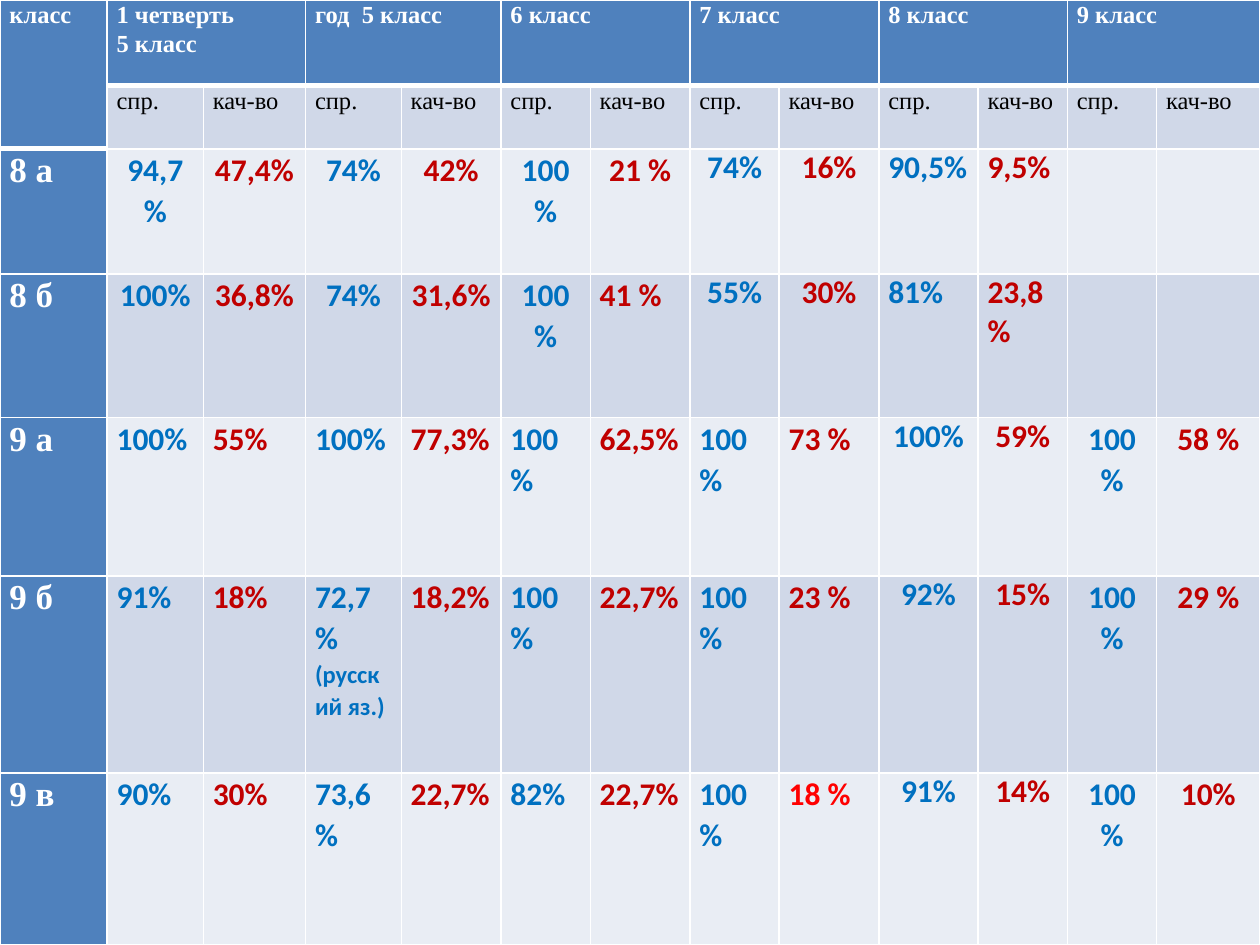
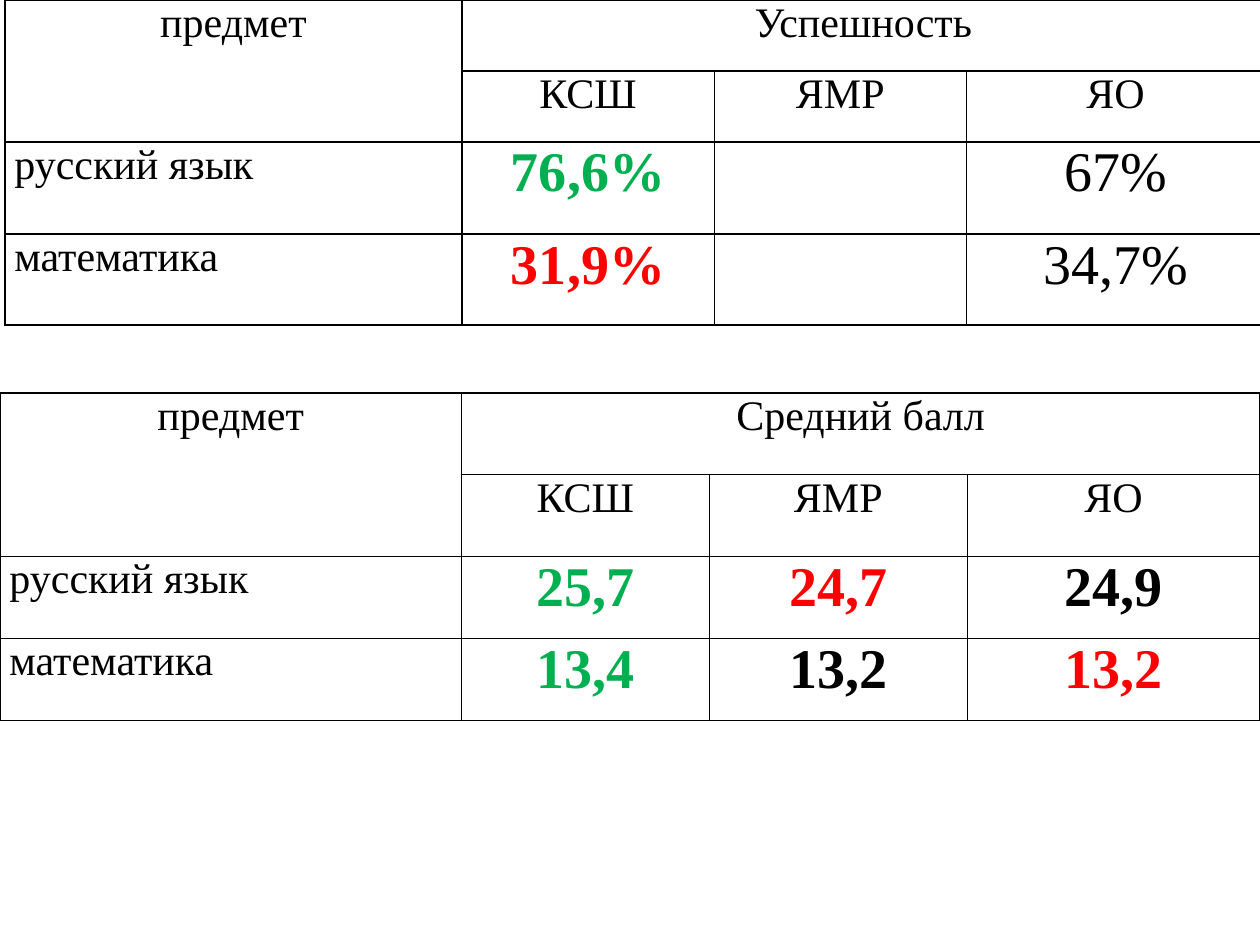
from lxml.etree import SubElement
from pptx import Presentation
from pptx.dml.color import RGBColor
from pptx.enum.text import PP_ALIGN
from pptx.oxml.ns import qn
from pptx.util import Cm, Pt

WHITE = RGBColor(0xFF, 0xFF, 0xFF)
BLACK = RGBColor(0x00, 0x00, 0x00)
HEADER_BLUE = RGBColor(0x4F, 0x81, 0xBD)
BAND_DARK = RGBColor(0xD0, 0xD8, 0xE8)
BAND_LIGHT = RGBColor(0xE9, 0xED, 0xF4)
PASS_BLUE = RGBColor(0x00, 0x70, 0xC0)
QUALITY_RED = RGBColor(0xC0, 0x00, 0x00)
RED = RGBColor(0xFF, 0x00, 0x00)
GREEN = RGBColor(0x00, 0xB0, 0x50)

SERIF = "Times New Roman"
SANS = "Calibri"
CENTER, LEFT = PP_ALIGN.CENTER, PP_ALIGN.LEFT
SLIDE_WIDTH, SLIDE_HEIGHT = 25.4, 19.05
CELL_MARGIN = 0.19
LOOSE = 1.07

PERIODS = ["1 четверть\n5 класс", "год  5 класс", "6 класс", "7 класс", "8 класс", "9 класс"]
MEASURES = ["спр.", "кач-во"]
CLASS_RESULTS = {
    "8 а": ["94,7%", "47,4%", "74%", "42%", "100%", "21 %", "74%", "16%", "90,5%", "9,5%"],
    "8 б": ["100%", "36,8%", "74%", "31,6%", "100%", "41 %", "55%", "30%", "81%", "23,8%"],
    "9 а": ["100%", "55%", "100%", "77,3%", "100%", "62,5%", "100%", "73 %", "100%", "59%",
            "100%", "58 %"],
    "9 б": ["91%", "18%", "72,7%\n(русский яз.)", "18,2%", "100%", "22,7%", "100%", "23 %",
            "92%", "15%", "100%", "29 %"],
    "9 в": ["90%", "30%", "73,6%", "22,7%", "82%", "22,7%", "100%", "18 %", "91%", "14%",
            "100%", "10%"],
}
CLASS_COLUMNS = [2.16, 1.94, 2.06, 1.93, 2.01, 1.8, 2.01, 1.8, 2.01, 2.0, 1.8, 1.8, 2.08]
CLASS_ROWS = [1.73, 1.27, 2.52, 2.9, 3.19, 3.97, 3.47]

SCHOOL_LEVELS = ["КСШ", "ЯМР", "ЯО"]
# Each result: text, colour, bold
SUCCESS_RATES = {
    "русский язык": [("76,6%", GREEN, True), None, ("67%", BLACK, False)],
    "математика": [("31,9%", RED, True), None, ("34,7%", BLACK, False)],
}
AVERAGE_SCORES = {
    "русский язык": [("25,7", GREEN, True), ("24,7", RED, True), ("24,9", BLACK, True)],
    "математика": [("13,4", GREEN, True), ("13,2", BLACK, True), ("13,2", RED, True)],
}


def add_grid(slide, left, top, columns, rows):
    """Add an unstyled table with the given column widths and row heights in cm."""
    table = slide.shapes.add_table(len(rows), len(columns), Cm(left), Cm(top),
                                   Cm(sum(columns)), Cm(sum(rows))).table
    table.first_row = table.horz_banding = False
    for column, width in zip(table.columns, columns):
        column.width = Cm(width)
    for row, height in zip(table.rows, rows):
        row.height = Cm(height)
    return table


def set_borders(cell, color, bottom=1, top=1):
    properties = cell._tc.get_or_add_tcPr()
    for side, width in (("L", 1), ("R", 1), ("T", top), ("B", bottom)):
        line = SubElement(properties, qn(f"a:ln{side}"), w=str(Pt(width)))
        SubElement(SubElement(line, qn("a:solidFill")), qn("a:srgbClr"), val=str(color))


def fill_cell(cell, color=None):
    if color is None:
        cell.fill.background()
    else:
        cell.fill.solid()
        cell.fill.fore_color.rgb = color


def write(cell, text, size, color=BLACK, bold=False, font=SERIF, align=LEFT, spacing=1.0):
    cell.margin_left = cell.margin_right = Cm(CELL_MARGIN)
    cell.margin_top = cell.margin_bottom = 0
    cell.text = text
    for paragraph in cell.text_frame.paragraphs:
        paragraph.alignment = align
        paragraph.line_spacing = spacing
        paragraph.font.name = font
        paragraph.font.size = Pt(size)
        paragraph.font.bold = bold
        paragraph.font.color.rgb = color


def style_class_grid(table):
    """Paint the blue headers, the alternating bands and the white borders."""
    for r in range(len(CLASS_ROWS)):
        for c in range(len(CLASS_COLUMNS)):
            cell = table.cell(r, c)
            under_header = r == 0 or (r == 1 and c == 0)
            below_header = r == 1 or (r == 2 and c == 0)
            set_borders(cell, WHITE, bottom=3 if under_header else 1,
                        top=3 if below_header else 1)
            band = BAND_DARK if r % 2 else BAND_LIGHT
            fill_cell(cell, HEADER_BLUE if r == 0 or c == 0 else band)


def write_class_results(table, r, name, results):
    write(table.cell(r, 0), name, 20, WHITE, True, spacing=LOOSE)
    eighth_grade = name.startswith("8")
    for c, result in enumerate(results, start=1):
        centered = (c <= 8) == eighth_grade and (name, c) != ("8 б", 6)
        tight = c in (9, 10) or (eighth_grade and c in (7, 8))
        color = PASS_BLUE if c % 2 else QUALITY_RED
        if (name, c) == ("9 в", 8):
            color = RED
        cell = table.cell(r, c)
        write(cell, result, 18, color, True, SANS, CENTER if centered else LEFT,
              1.0 if tight else LOOSE)
        for remark in cell.text_frame.paragraphs[1:]:
            remark.font.size = Pt(14)


def add_class_slide(slide):
    table = add_grid(slide, 0, 0, CLASS_COLUMNS, CLASS_ROWS)
    style_class_grid(table)
    table.cell(0, 0).merge(table.cell(1, 0))
    write(table.cell(0, 0), "класс", 14, WHITE, True, spacing=LOOSE)
    for i, period in enumerate(PERIODS):
        c = 1 + 2 * i
        table.cell(0, c).merge(table.cell(0, c + 1))
        write(table.cell(0, c), period, 14, WHITE, True, spacing=LOOSE)
        for offset, measure in enumerate(MEASURES):
            write(table.cell(1, c + offset), measure, 14, spacing=LOOSE)
    for r, (name, results) in enumerate(CLASS_RESULTS.items(), start=2):
        write_class_results(table, r, name, results)


def add_subject_table(slide, left, top, columns, rows, heading, subjects):
    table = add_grid(slide, left, top, columns, rows)
    for r in range(len(rows)):
        for c in range(len(columns)):
            set_borders(table.cell(r, c), BLACK)
            fill_cell(table.cell(r, c))
    table.cell(0, 0).merge(table.cell(1, 0))
    table.cell(0, 1).merge(table.cell(0, 3))
    write(table.cell(0, 0), "предмет", 24, align=CENTER)
    write(table.cell(0, 1), heading, 24, align=CENTER)
    for c, level in enumerate(SCHOOL_LEVELS, start=1):
        write(table.cell(1, c), level, 24, align=CENTER)
    for r, (subject, results) in enumerate(subjects.items(), start=2):
        write(table.cell(r, 0), subject, 24)
        for c, result in enumerate(results, start=1):
            if result:
                text, color, bold = result
                write(table.cell(r, c), text, 32, color, bold, align=CENTER)


def add_subject_slide(slide):
    add_subject_table(slide, 0.1, 0, [9.21, 5.09, 5.08, 6.02], [1.43, 1.43, 1.86, 1.83],
                      "Успешность", SUCCESS_RATES)
    add_subject_table(slide, 0, 7.92, [9.3, 5.0, 5.2, 5.9], [1.65] * 4,
                      "Средний балл", AVERAGE_SCORES)


def main():
    presentation = Presentation()
    presentation.slide_width = Cm(SLIDE_WIDTH)
    presentation.slide_height = Cm(SLIDE_HEIGHT)
    blank = presentation.slide_layouts[6]
    for build in (add_class_slide, add_subject_slide):
        build(presentation.slides.add_slide(blank))
    presentation.save("out.pptx")


if __name__ == "__main__":
    main()
